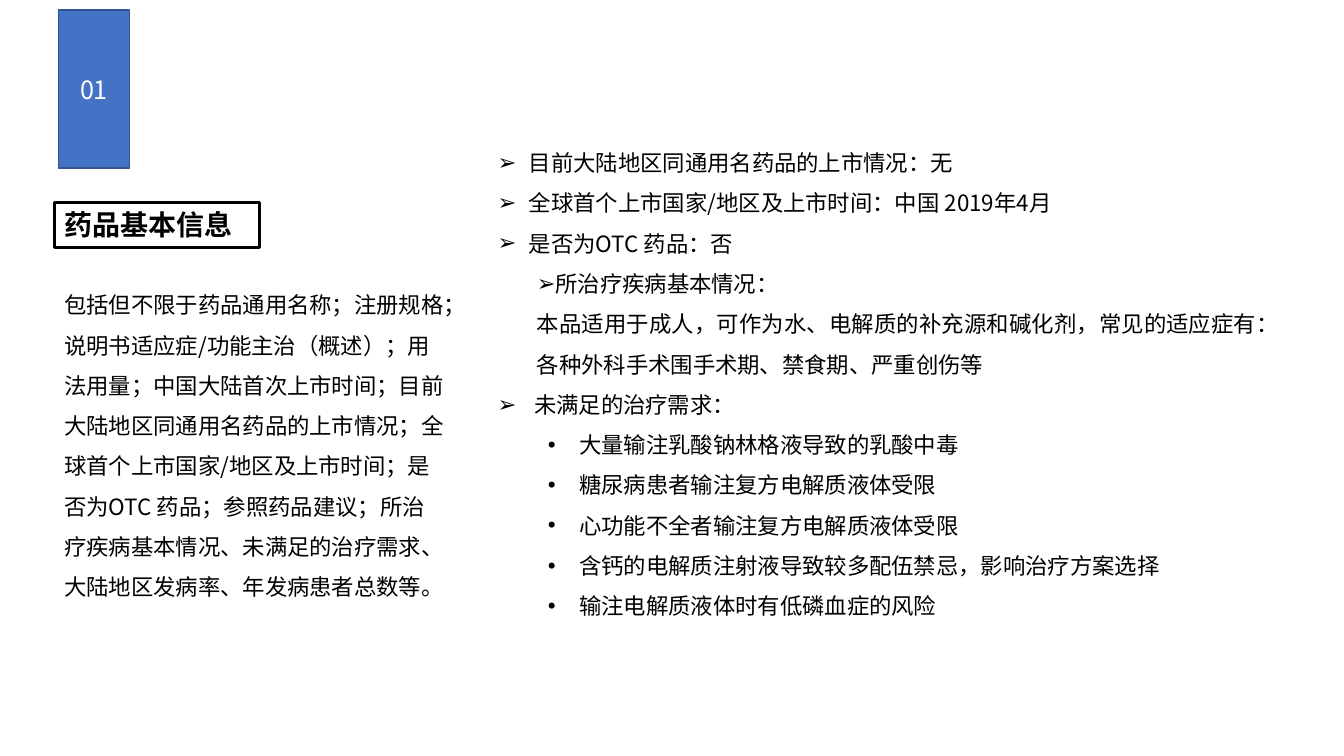
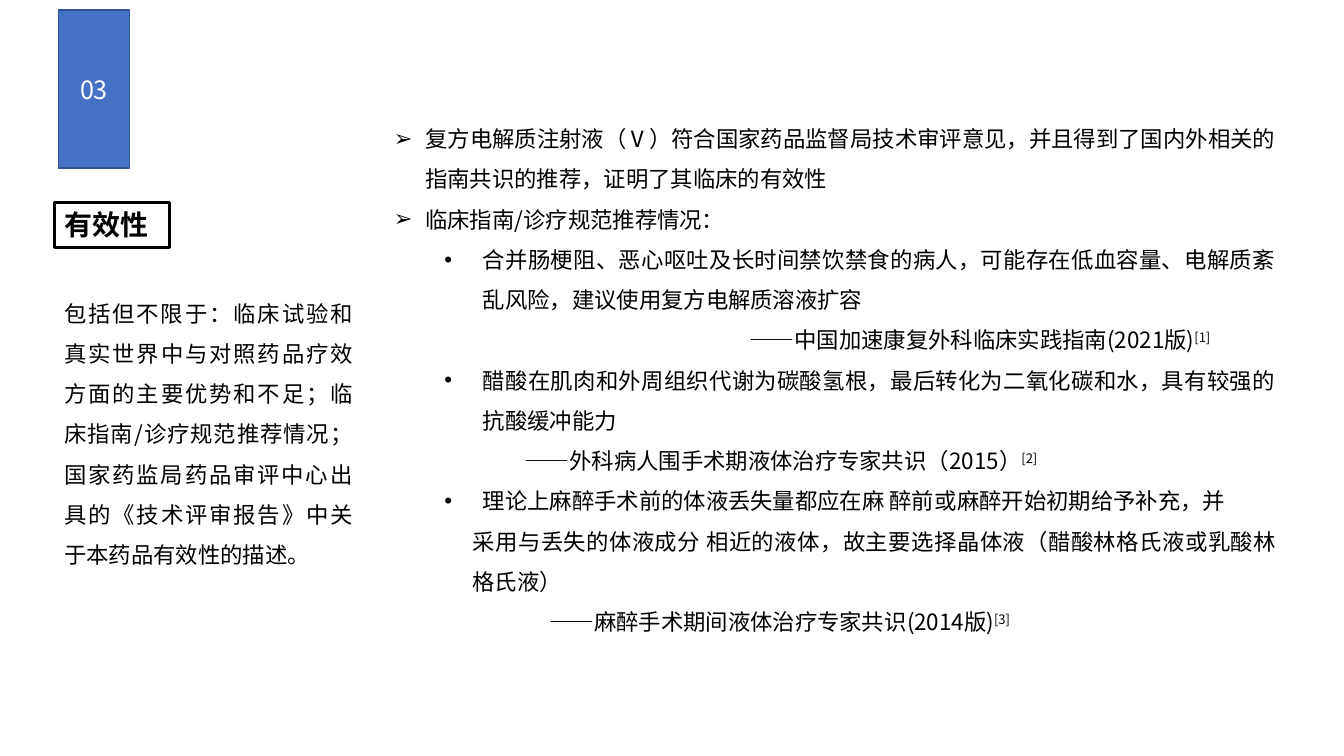
from lxml import etree
from pptx import Presentation
from pptx import util as u
from pptx.dml import color
from pptx.enum import shapes, text
from pptx.oxml import ns

FONT = "Noto Sans CJK SC"
BLUE, NAVY, BLACK, WHITE = "4472C4", "325491", "000000", "FFFFFF"
ALIGN = text.PP_ALIGN
MARGIN_LEFT = 1.37

BODY = {"size": u.Pt(16), "bold": False}
HEADING = {"size": u.Pt(20), "bold": True}
NUMBER = {"size": u.Pt(18), "bold": False}
GROWING = {
    "word_wrap": True,
    "auto_size": text.MSO_AUTO_SIZE.SHAPE_TO_FIT_TEXT,
    "vertical_anchor": text.MSO_ANCHOR.TOP,
}
FIXED = {**GROWING, "auto_size": text.MSO_AUTO_SIZE.NONE}
CENTRED = {"word_wrap": True, "vertical_anchor": text.MSO_ANCHOR.MIDDLE}

ARROW = {"bullet": "➢", "margin": 0.79, "indent": -0.79}
WIDE_ARROW = {"bullet": "➢", "margin": 0.92, "indent": -0.92}
INNER_ARROW = {"bullet": "➢", "margin": 0, "indent": 0.99}
DOT = {"bullet": "•", "margin": 2.06, "indent": -0.79}
WIDE_DOT = {"bullet": "•", "margin": 2.24, "indent": -0.97}


def plain(margin, indent=0):
    return {"bullet": None, "margin": margin, "indent": indent}


def rgb(value):
    return color.RGBColor.from_string(value)


def apply(target, values):
    for name, value in values.items():
        setattr(target, name, value)


def place(shape, box):
    names = ("left", "top", "width", "height")
    apply(shape, {name: u.Cm(value) for name, value in zip(names, box)})


def outline(shape, colour, width):
    shape.line.color.rgb = rgb(colour)
    shape.line.width = u.Pt(width)


def add_run(paragraph, words, style, colour, raised=False):
    run = paragraph.add_run()
    run.text = words
    apply(run.font, {**style, "name": FONT})
    run.font.color.rgb = rgb(colour)
    properties = run.font._element
    properties.set("lang", "zh-CN")
    if raised:
        properties.set("baseline", "30000")
    for tag in ("a:ea", "a:cs"):
        etree.SubElement(properties, ns.qn(tag)).set("typeface", FONT)


def format_paragraph(paragraph, layout, alignment):
    apply(paragraph, {"alignment": alignment, "line_spacing": 1.5})
    properties = paragraph._p.get_or_add_pPr()
    values = {
        "marL": str(u.Cm(layout["margin"])),
        "indent": str(u.Cm(layout["indent"])),
        "eaLnBrk": "1",
        "hangingPunct": "1",
    }
    for name, value in values.items():
        properties.set(name, value)
    if layout["bullet"]:
        etree.SubElement(properties, ns.qn("a:buFont")).set("typeface", "Arial")
        etree.SubElement(properties, ns.qn("a:buChar")).set("char", layout["bullet"])


def add_label(frame, words, frame_style, style, colour, alignment):
    apply(frame, frame_style)
    paragraph = frame.paragraphs[0]
    paragraph.alignment = alignment
    add_run(paragraph, words, style, colour)


def add_number_band(slide, number):
    band = slide.shapes.add_shape(shapes.MSO_SHAPE.RECTANGLE, 0, 0, 0, 0)
    place(band, (1.47, 0.25, 1.8, 3.99))
    band.shadow.inherit = False
    band.fill.solid()
    band.fill.fore_color.rgb = rgb(BLUE)
    outline(band, NAVY, 1)
    add_label(band.text_frame, number, CENTRED, NUMBER, WHITE, ALIGN.CENTER)


def add_title(slide, words, width):
    title = slide.shapes.title
    place(title, (MARGIN_LEFT, 5.11, width, 1.12))
    outline(title, BLACK, 2.25)
    add_label(title.text_frame, words, FIXED, HEADING, BLACK, ALIGN.LEFT)


def add_paragraphs(slide, box, items, alignment=ALIGN.JUSTIFY):
    shape = slide.shapes.add_textbox(0, 0, 0, 0)
    place(shape, box)
    frame = shape.text_frame
    apply(frame, GROWING)
    for index, (layout, words, *reference) in enumerate(items):
        paragraph = frame.add_paragraph() if index else frame.paragraphs[0]
        format_paragraph(paragraph, layout, alignment)
        add_run(paragraph, words, BODY, BLACK)
        for mark in reference:
            add_run(paragraph, mark, BODY, BLACK, raised=True)


def add_section(presentation, number, title, title_width):
    slide = presentation.slides.add_slide(presentation.slide_layouts[5])
    add_number_band(slide, number)
    add_title(slide, title, title_width)
    return slide


def add_basic_information(presentation):
    slide = add_section(presentation, "01", "药品基本信息", 5.16)
    add_paragraphs(slide, (MARGIN_LEFT, 6.88, 10.1, 9.32), [
        (plain(0), "包括但不限于药品通用名称；注册规格；说明书适应症/功能主治（概述）；"
                   "用法用量；中国大陆首次上市时间；目前大陆地区同通用名药品的上市情况；"
                   "全球首个上市国家/地区及上市时间；是否为OTC 药品；参照药品建议；"
                   "所治疗疾病基本情况、未满足的治疗需求、大陆地区发病率、年发病患者总数等。"),
    ], ALIGN.LEFT)
    add_paragraphs(slide, (12.29, 3.3, 20.22, 12.4), [
        (ARROW, "目前大陆地区同通用名药品的上市情况：无"),
        (ARROW, "全球首个上市国家/地区及上市时间：中国 2019年4月"),
        (ARROW, "是否为OTC 药品：否"),
        (INNER_ARROW, "所治疗疾病基本情况："),
        (plain(0.99), "本品适用于成人，可作为水、电解质的补充源和碱化剂，"
                      "常见的适应症有：各种外科手术围手术期、禁食期、严重创伤等"),
        (WIDE_ARROW, "未满足的治疗需求："),
        (DOT, "大量输注乳酸钠林格液导致的乳酸中毒"),
        (DOT, "糖尿病患者输注复方电解质液体受限"),
        (DOT, "心功能不全者输注复方电解质液体受限"),
        (DOT, "含钙的电解质注射液导致较多配伍禁忌，影响治疗方案选择"),
        (DOT, "输注电解质液体时有低磷血症的风险"),
    ])


def add_effectiveness(presentation):
    slide = add_section(presentation, "03", "有效性", 2.9)
    add_paragraphs(slide, (9.68, 2.69, 22.73, 13.44), [
        (ARROW, "复方电解质注射液（Ⅴ）符合国家药品监督局技术审评意见，"
                "并且得到了国内外相关的指南共识的推荐，证明了其临床的有效性"),
        (ARROW, "临床指南/诊疗规范推荐情况："),
        (WIDE_DOT, "合并肠梗阻、恶心呕吐及长时间禁饮禁食的病人，"
                   "可能存在低血容量、电解质紊乱风险，建议使用复方电解质溶液扩容"),
        (plain(1.27, 7.7), "——中国加速康复外科临床实践指南(2021版)", "[1]"),
        (WIDE_DOT, "醋酸在肌肉和外周组织代谢为碳酸氢根，"
                   "最后转化为二氧化碳和水，具有较强的抗酸缓冲能力"),
        (plain(0, 3.3), "——外科病人围手术期液体治疗专家共识（2015）", "[2]"),
        (WIDE_DOT, "理论上麻醉手术前的体液丢失量都应在麻 醉前或麻醉开始初期给予补充，并"),
        (plain(1.98), "采用与丢失的体液成分 相近的液体，"
                      "故主要选择晶体液（醋酸林格氏液或乳酸林格氏液）"),
        (plain(0, 3.92), "——麻醉手术期间液体治疗专家共识(2014版)", "[3]"),
    ])
    add_paragraphs(slide, (MARGIN_LEFT, 7.09, 7.77, 7.29), [
        (plain(0), "包括但不限于：临床试验和真实世界中与对照药品疗效方面的主要优势和不足；"
                   "临床指南/诊疗规范推荐情况；国家药监局药品审评中心出具的"
                   "《技术评审报告》中关于本药品有效性的描述。"),
    ])


def main():
    presentation = Presentation()
    apply(presentation, {"slide_width": u.Cm(33.87), "slide_height": u.Cm(19.05)})
    add_basic_information(presentation)
    add_effectiveness(presentation)
    presentation.save("out.pptx")


if __name__ == "__main__":
    main()
